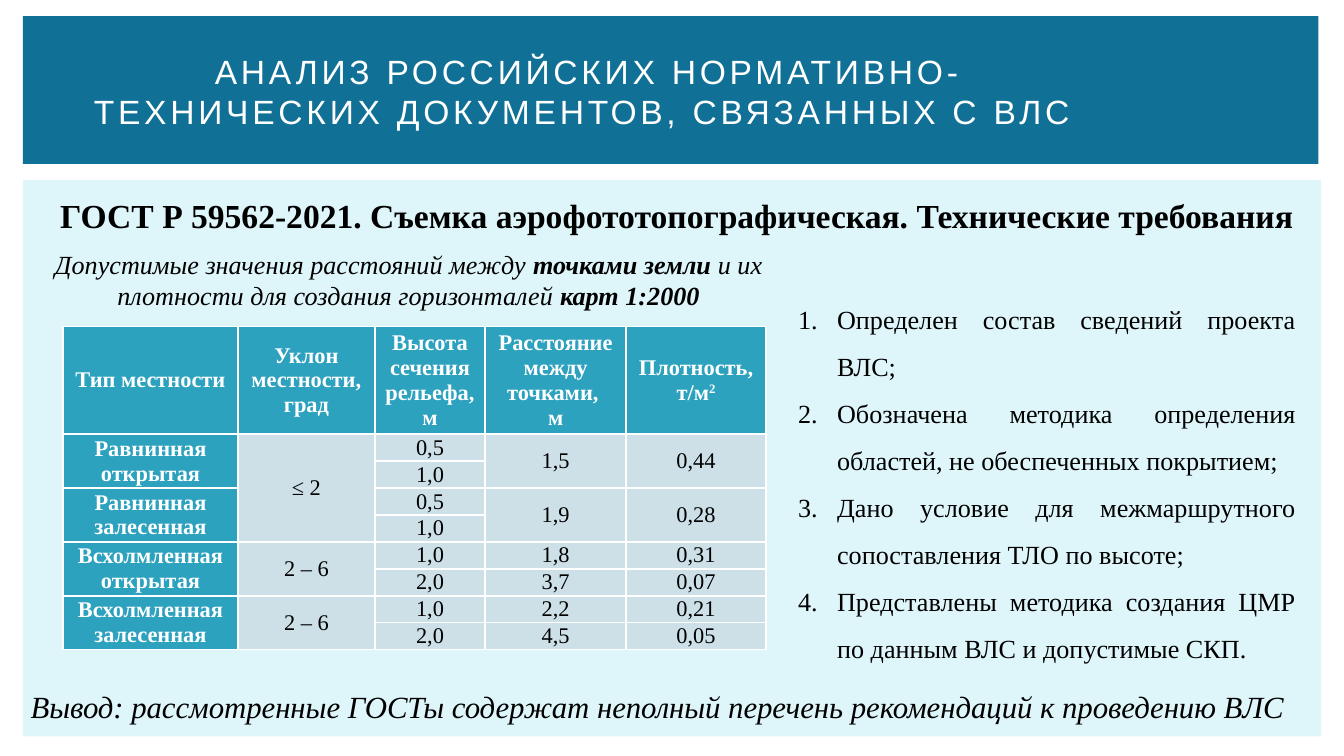
"""Build a slide on the requirements for airborne laser survey."""
from dataclasses import dataclass

import pptx
import pptx.dml.color
import pptx.enum.shapes
import pptx.enum.text
import pptx.oxml
import pptx.oxml.ns
import pptx.util

Inches = pptx.util.Inches
RGBColor = pptx.dml.color.RGBColor
Align = pptx.enum.text.PP_ALIGN
Anchor = pptx.enum.text.MSO_ANCHOR

WHITE = RGBColor(0xFF, 0xFF, 0xFF)
BLACK = RGBColor(0, 0, 0)
NAVY = RGBColor(0x11, 0x70, 0x96)
PALE = RGBColor(0xDE, 0xF5, 0xFA)
TEAL = RGBColor(0x2D, 0xA2, 0xBF)
GREY = RGBColor(0xCD, 0xE0, 0xE8)
SERIF = "Times New Roman"


@dataclass
class Box:
    left: float
    top: float
    width: float
    height: float

    def place(self) -> tuple:
        return tuple(map(Inches, (self.left, self.top, self.width, self.height)))


@dataclass
class Style:
    size: float
    color: RGBColor = BLACK
    bold: bool = False
    italic: bool = False
    face: str = SERIF


@dataclass
class Label:
    box: Box
    text: str
    style: Style
    align: Align = Align.LEFT
    wrap: bool = True
    anchor: Anchor = Anchor.TOP


PANELS = [(Box(0.17, 1.34, 9.66, 4.14), PALE), (Box(0.17, 0.12, 9.64, 1.1), NAVY)]

TITLE = Label(Box(0.59, 0.25, 7.58, 0.86),
              "АНАЛИЗ РОССИЙСКИХ НОРМАТИВНО-ТЕХНИЧЕСКИХ ДОКУМЕНТОВ, СВЯЗАННЫХ С ВЛС ",
              Style(18, WHITE, face="Arial"), Align.CENTER, anchor=Anchor.MIDDLE)
NORM = Label(Box(0.35, 1.4, 9.54, 0.4),
             "ГОСТ Р 59562-2021. Съемка аэрофототопографическая. Технические требования",
             Style(18, bold=True), wrap=False)
POINTS = Label(Box(5.84, 2.09, 3.9, 2.93), "\n".join([
    "Определен состав сведений проекта ВЛС;",
    "Обозначена методика определения областей, не обеспеченных покрытием;",
    "Дано условие для межмаршрутного сопоставления ТЛО по высоте; ",
    "Представлены методика создания ЦМР по данным ВЛС и допустимые СКП.",
]), Style(14), Align.JUSTIFY)
NOTE = Label(Box(0.24, 1.8, 5.6, 0.57), "Допустимые значения расстояний между ",
             Style(14, italic=True), Align.CENTER)
TAIL = [("точками земли ", True), ("и их плотности для создания горизонталей ", False),
        ("карт 1:2000", True)]
RESULT = Label(
    Box(0.13, 5.07, 9.6, 0.39),
    "Вывод: рассмотренные ГОСТы содержат неполный перечень рекомендаций к проведению ВЛС",
    Style(16.5, italic=True))

WIDTHS = [1.3, 1.02, 0.82, 1.05, 1.04]
HEIGHTS = [0.8] + [0.2] * 8
GRID = Box(0.47, 2.43, sum(WIDTHS), sum(HEIGHTS))
ROWS = [
    ["Тип местности", "Уклон местности, град", "Высота сечения рельефа, м",
     "Расстояние между точками, \nм", "Плотность, т/м"],
    ["Равнинная открытая", "≤ 2", "0,5", "1,5", "0,44"],
    ["", "", "1,0", "", ""],
    ["Равнинная залесенная", "", "0,5", "1,9", "0,28"],
    ["", "", "1,0", "", ""],
    ["Всхолмленная открытая", "2 – 6", "1,0", "1,8", "0,31"],
    ["", "", "2,0", "3,7", "0,07"],
    ["Всхолмленная залесенная", "2 – 6", "1,0", "2,2", "0,21"],
    ["", "", "2,0", "4,5", "0,05"],
]


def add_node(parent, xml: str) -> None:
    """Append a drawing element given as a tag body."""
    space = pptx.oxml.ns.nsdecls("a")
    name, rest = xml[1:].split(" ", 1)
    parent.append(pptx.oxml.parse_xml(f"<{name} {space} {rest}"))


def set_font(run, style: Style) -> None:
    """Apply a style to a run."""
    font = run.font
    font.name, font.size = style.face, pptx.util.Pt(style.size)
    font.bold, font.italic = style.bold, style.italic
    font.color.rgb = style.color


def set_text(frame, text: str, style: Style, align: Align) -> None:
    """Fill a frame and format all its runs."""
    frame.text = text
    for para in frame.paragraphs:
        para.alignment = align
        for run in para.runs:
            set_font(run, style)


def add_panel(slide, box: Box, color: RGBColor) -> None:
    """Draw a plain filled rectangle."""
    kind = pptx.enum.shapes.MSO_SHAPE.RECTANGLE
    shape = slide.shapes.add_shape(kind, *box.place())
    shape.shadow.inherit = False
    shape.fill.solid()
    shape.fill.fore_color.rgb = color
    shape.line.fill.background()


def add_label(slide, label: Label):
    """Draw a text box and return its frame."""
    frame = slide.shapes.add_textbox(*label.box.place()).text_frame
    frame.word_wrap = label.wrap
    frame.vertical_anchor = label.anchor
    set_text(frame, label.text, label.style, label.align)
    return frame


def add_list(slide, label: Label) -> None:
    """Draw a numbered list."""
    for para in add_label(slide, label).paragraphs:
        para.line_spacing = 1.5
        props = para._p.get_or_add_pPr()
        props.set("marL", str(Inches(0.29)))
        props.set("indent", str(Inches(-0.29)))
        add_node(props, '<a:buFont typeface="+mj-lt"/>')
        add_node(props, '<a:buAutoNum type="arabicPeriod"/>')


def set_cell(cell, text: str, head: bool) -> None:
    """Fill, frame and label one table cell."""
    cell.margin_left = cell.margin_right = Inches(0.07)
    cell.margin_top = cell.margin_bottom = 0
    cell.vertical_anchor = Anchor.MIDDLE
    for side in "LRTB":
        add_node(cell._tc.get_or_add_tcPr(),
                 f'<a:ln{side} w="12700"><a:solidFill><a:srgbClr val="{WHITE}"/>'
                 f'</a:solidFill></a:ln{side}>')
    cell.fill.solid()
    cell.fill.fore_color.rgb = TEAL if head else GREY
    style = Style(12, WHITE if head else BLACK, bold=head)
    set_text(cell.text_frame, text, style, Align.CENTER)


def add_grid(slide) -> None:
    """Draw the table of distances and densities."""
    shape = slide.shapes.add_table(len(HEIGHTS), len(WIDTHS), *GRID.place())
    table = shape.table
    for col, width in zip(table.columns, WIDTHS):
        col.width = Inches(width)
    for row, height in zip(table.rows, HEIGHTS):
        row.height = Inches(height)
    for y, texts in enumerate(ROWS):
        for x, text in enumerate(texts):
            set_cell(table.cell(y, x), text, y == 0 or x == 0)
    for x in range(len(WIDTHS)):
        tops = [y for y, texts in enumerate(ROWS) if texts[x]]
        for top, end in zip(tops, tops[1:] + [len(ROWS)]):
            if end - top > 1:
                table.cell(top, x).merge(table.cell(end - 1, x))
    power = table.cell(0, 4).text_frame.paragraphs[0].add_run()
    power.text = "2"
    set_font(power, Style(12, WHITE, bold=True))
    power.font._element.set("baseline", "30000")


def main() -> None:
    """Build and save the slide."""
    deck = pptx.Presentation()
    deck.slide_width = Inches(10)
    deck.slide_height = deck.slide_width * 9 // 16
    slide = deck.slides.add_slide(deck.slide_layouts[6])
    for box, color in PANELS:
        add_panel(slide, box, color)
    add_label(slide, NORM)
    add_list(slide, POINTS)
    note = add_label(slide, NOTE).paragraphs[0]
    for text, bold in TAIL:
        run = note.add_run()
        run.text = text
        set_font(run, Style(14, bold=bold, italic=True))
    add_grid(slide)
    add_label(slide, RESULT)
    title = add_label(slide, TITLE).paragraphs[0].runs[0]
    title.font._element.set("spc", "200")
    deck.save("out.pptx")


if __name__ == "__main__":
    main()
